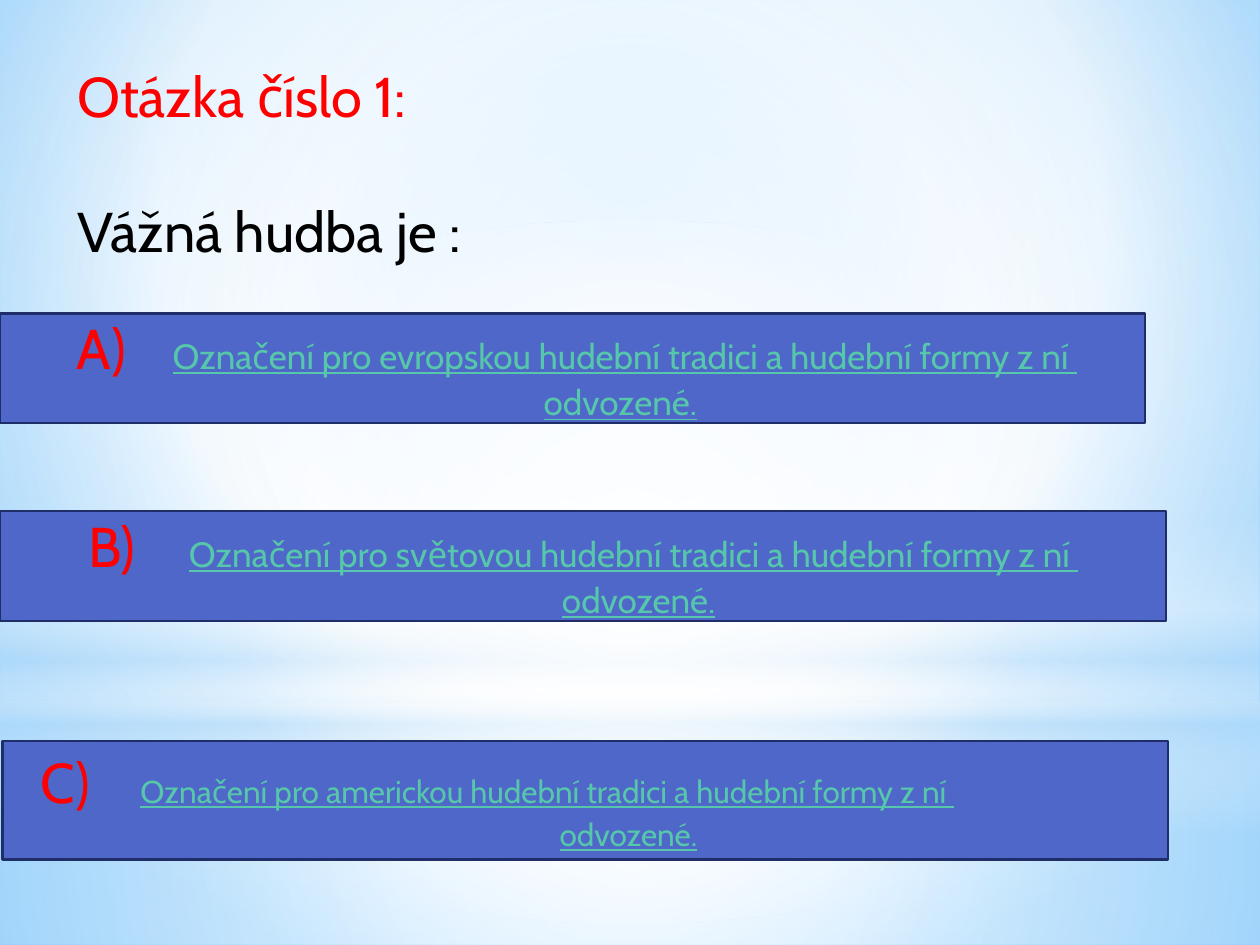
from lxml.etree import SubElement
from pptx import Presentation
from pptx.dml.color import RGBColor
from pptx.enum.shapes import MSO_SHAPE
from pptx.enum.text import MSO_ANCHOR, MSO_AUTO_SIZE, PP_ALIGN
from pptx.oxml.ns import qn
from pptx.oxml.xmlchemy import OxmlElement
from pptx.util import Cm, Pt

FONT = "Cabin"
COLORS = {
    "red": "FF0000", "black": "000000", "link": "56C7AA",
    "box": "4E67C8", "border": "1F2E69",
    "white": "FFFFFF", "pale": "B4DCFA", "sky": "9ED5FF", "blue": "5BB9FF",
}


def set_gradient(parent, stops, focus=None):
    """Swap a solid fill for a gradient: round about focus, else top to bottom."""
    gradient = OxmlElement("a:gradFill")
    stop_list = SubElement(gradient, qn("a:gsLst"))
    for position, color, opacity in stops:
        stop = SubElement(stop_list, qn("a:gs"), pos=str(position * 1000))
        tone = SubElement(stop, qn("a:srgbClr"), val=COLORS[color])
        SubElement(tone, qn("a:alpha"), val=str(opacity * 1000))
    if focus:
        circle = SubElement(gradient, qn("a:path"), path="circle")
        sides = {side: str(share * 1000) for side, share in zip("ltrb", focus)}
        SubElement(circle, qn("a:fillToRect"), **sides)
    else:
        SubElement(gradient, qn("a:lin"), ang="5400000", scaled="0")
    parent.replace(parent.find(qn("a:solidFill")), gradient)


def add_span(para, text, size, color, underline=None):
    span = para.add_run()
    span.text = text
    span.font.name = FONT
    span.font.size = Pt(size)
    span.font.underline = underline
    span.font.color.rgb = RGBColor.from_string(COLORS[color])


deck = Presentation()
deck.slide_width, deck.slide_height = Cm(25.4), Cm(19.05)
page = deck.slides.add_slide(deck.slide_layouts[5])

# Background
page.background.fill.solid()
set_gradient(page.element.find(".//" + qn("p:bgPr")),
             [(0, "sky", 100), (60, "white", 100), (100, "blue", 100)],
             (20, 10, 20, 60))

# Soft light over the background
CENTER = (50, 50, 50, 50)
lights = [
    (MSO_SHAPE.RECTANGLE, 14.17, 4.88, CENTER,
     [(0, "white", 91), (37, "white", 76), (100, "pale", 79)]),
    (MSO_SHAPE.RECTANGLE, 0, 14.17, CENTER,
     [(0, "white", 89), (48, "white", 62), (100, "pale", 79)]),
    (MSO_SHAPE.RECTANGLE, 10.46, 6.35, None,
     [(0, "white", 0), (29, "white", 30), (45, "pale", 40),
      (55, "white", 26), (65, "pale", 60), (100, "white", 0)]),
    (MSO_SHAPE.OVAL, 4.45, 14.17, CENTER,
     [(0, "white", 100), (56, "white", 0)]),
]
for kind, top, height, focus, stops in lights:
    light = page.shapes.add_shape(kind, Cm(0), Cm(top), deck.slide_width, Cm(height))
    light.shadow.inherit = False
    light.line.fill.background()
    light.fill.solid()
    set_gradient(light.element.spPr, stops, focus)

# Question, brought in front of the light
title = page.shapes.title
page.shapes.element.append(title.element)
title.left, title.top, title.width, title.height = Cm(1.3), Cm(1.12), Cm(22.81), Cm(5.74)
frame = title.text_frame
frame.word_wrap = True
frame.auto_size = MSO_AUTO_SIZE.NONE
frame.vertical_anchor = MSO_ANCHOR.TOP
heading, question = frame.paragraphs[0], frame.add_paragraph()
add_span(heading, "Otázka číslo 1:", 32, "red")
add_span(question, "Vážná hudba je :", 32, "black")
question.space_before = Pt(38.5)
for para in (heading, question):
    para.alignment = PP_ALIGN.LEFT

# Answers: tab stops hold the letter and the text, then the ends of the second line's lead
answers = [
    ("A)", "Označení pro evropskou hudební tradici a hudební formy z ní ", 20,
     (0, 6.32, 23.09, 2.21), (1.55, 3.48), (9.06, 10.96)),
    ("B)", "Označení pro světovou hudební tradici a hudební formy z ní ", 20,
     (0, 10.31, 23.5, 2.21), (1.78, 3.81), (9.09, 11.33)),
    ("C)", "Označení pro americkou hudební tradici a hudební formy z ní ", 18,
     (0.05, 14.94, 23.5, 2.39), (0.77, 2.78), (9.5, 11.23)),
]
for letter, text, size, place, first_tabs, second_tabs in answers:
    box = page.shapes.add_shape(MSO_SHAPE.RECTANGLE, *map(Cm, place))
    box.shadow.inherit = False
    box.fill.solid()
    box.fill.fore_color.rgb = RGBColor.from_string(COLORS["box"])
    box.line.color.rgb = RGBColor.from_string(COLORS["border"])
    box.line.width = Pt(1.25)
    frame = box.text_frame
    frame.word_wrap = True
    frame.vertical_anchor = MSO_ANCHOR.MIDDLE
    frame.margin_left = frame.margin_right = Cm(0)
    first, second = frame.paragraphs[0], frame.add_paragraph()
    for para, tabs in ((first, first_tabs), (second, second_tabs)):
        para.alignment = PP_ALIGN.LEFT
        tab_list = SubElement(para._p.get_or_add_pPr(), qn("a:tabLst"))
        for tab in tabs:
            SubElement(tab_list, qn("a:tab"), pos=str(Cm(tab)), algn="l")
    add_span(first, f"\t{letter}\t", 32, "red")
    add_span(first, text, size, "link", True)
    add_span(second, "\t", size, "link")
    add_span(second, "\todvozené.", size, "link", True)

deck.save("out.pptx")
